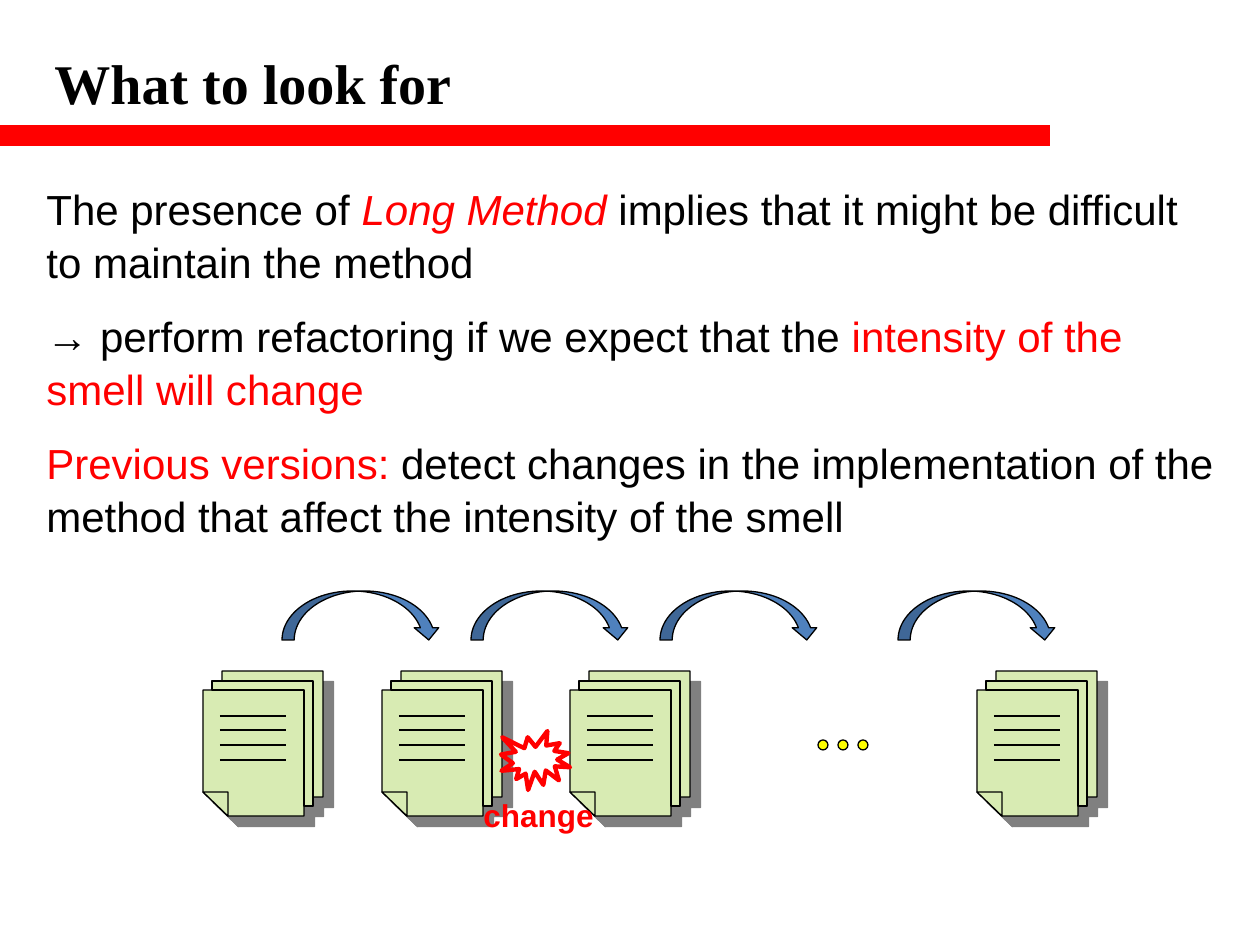
import dataclasses
import typing

import lxml.etree
import pptx
import pptx.dml.color
import pptx.enum.shapes
import pptx.oxml
import pptx.oxml.ns
import pptx.util

EMU_PER_PX = 914400 / 126
RED = pptx.dml.color.RGBColor(0xFF, 0x00, 0x00)
BLACK = pptx.dml.color.RGBColor(0x00, 0x00, 0x00)
GREEN = pptx.dml.color.RGBColor(0xD8, 0xEB, 0xB3)
BLUE = pptx.dml.color.RGBColor(0x4F, 0x81, 0xBD)
YELLOW = pptx.dml.color.RGBColor(0xFF, 0xFF, 0x00)
SHADOW_GRAY = "808080"

SHAPES = pptx.enum.shapes.MSO_SHAPE
PAGE_TOP = 671
VERSION_LEFTS = (203, 382, 570, 977)
ARROW_LEFTS = (282, 471, 660, 898)
PAGE_CONTOURS = (
    ((0, 121), (0, 19), (9, 19), (9, 10), (19, 10), (19, 0), (120, 0),
     (120, 126), (110, 126), (110, 135), (101, 135), (101, 145), (25, 145)),
    ((19, 10), (110, 10), (110, 135), (101, 135), (101, 19), (9, 19), (9, 10)),
    ((0, 121), (25, 121), (25, 145)),
)


@dataclasses.dataclass(frozen=True)
class Box:
    left: int
    top: int
    width: int
    height: int

    def emu(self) -> tuple:
        return tuple(px(value) for value in dataclasses.astuple(self))


@dataclasses.dataclass(frozen=True)
class TextRun:
    text: str
    size: int = 24
    color: pptx.dml.color.RGBColor = BLACK
    bold: bool = False
    italic: bool = False
    font: str = "Arial"


@dataclasses.dataclass(frozen=True)
class TextParagraph:
    runs: typing.Sequence[TextRun]
    before: int = 0
    after: int = 0
    line_spacing: float = 1.0


BODY = (
    (TextRun("The presence of "), TextRun("Long Method", color=RED, italic=True),
     TextRun(" implies that it might be difficult to maintain the method")),
    (TextRun("→ ", bold=True),
     TextRun("perform refactoring if we expect that the "),
     TextRun("intensity of the smell will change", color=RED)),
    (TextRun("Previous versions: ", color=RED),
     TextRun("detect changes in the implementation of the method "
             "that affect the intensity of the smell")),
)


def px(value: int) -> pptx.util.Emu:
    return pptx.util.Emu(round(value * EMU_PER_PX))


def add_text(slide, box: Box, paragraphs: typing.Sequence[TextParagraph], wrap: bool = True) -> None:
    frame = slide.shapes.add_textbox(*box.emu()).text_frame
    frame.word_wrap = wrap
    for index, content in enumerate(paragraphs):
        paragraph = frame.add_paragraph() if index else frame.paragraphs[0]
        paragraph.space_before = pptx.util.Pt(content.before)
        paragraph.space_after = pptx.util.Pt(content.after)
        paragraph.line_spacing = content.line_spacing
        for text_run in content.runs:
            run = paragraph.add_run()
            run.text = text_run.text
            run.font.name = text_run.font
            run.font.size = pptx.util.Pt(text_run.size)
            run.font.bold = text_run.bold
            run.font.italic = text_run.italic
            run.font.color.rgb = text_run.color


def add_line(slide, start: tuple, end: tuple, color, width: float) -> None:
    connector = slide.shapes.add_connector(
        pptx.enum.shapes.MSO_CONNECTOR.STRAIGHT, *map(px, start + end))
    connector.line.color.rgb = color
    connector.line.width = pptx.util.Pt(width)
    lxml.etree.SubElement(connector.element.spPr, pptx.oxml.ns.qn("a:effectLst"))


def style(shape, fill=None, line=BLACK, width: float = 0.75) -> None:
    shape.shadow.inherit = False
    if fill is None:
        shape.fill.background()
    else:
        shape.fill.solid()
        shape.fill.fore_color.rgb = fill
    shape.line.color.rgb = line
    shape.line.width = pptx.util.Pt(width)


def split_contours(shape) -> None:
    path_list = shape.element.spPr.find(".//" + pptx.oxml.ns.qn("a:pathLst"))
    combined = path_list[0]
    contour = None
    for step in list(combined):
        if step.tag == pptx.oxml.ns.qn("a:moveTo"):
            contour = lxml.etree.SubElement(path_list, combined.tag, dict(combined.attrib))
        contour.append(step)
    path_list.remove(combined)


def add_drop_shadow(shape) -> None:
    effects = shape.element.spPr.find(pptx.oxml.ns.qn("a:effectLst"))
    effects.append(pptx.oxml.parse_xml(
        f'<a:outerShdw {pptx.oxml.ns.nsdecls("a")} dist="107950" dir="2700000" '
        f'algn="ctr" rotWithShape="0"><a:srgbClr val="{SHADOW_GRAY}"/></a:outerShdw>'))


def add_version(slide, left: int) -> None:
    first, *others = PAGE_CONTOURS
    builder = slide.shapes.build_freeform(*first[0], scale=EMU_PER_PX)
    builder.add_line_segments(first[1:], close=True)
    for contour in others:
        builder.move_to(*contour[0])
        builder.add_line_segments(contour[1:], close=True)
    pages = builder.convert_to_shape(px(left), px(PAGE_TOP))
    split_contours(pages)
    style(pages, GREEN)
    add_drop_shadow(pages)
    for row in range(4):
        y = PAGE_TOP + 45 + row * 44 // 3
        add_line(slide, (left + 17, y), (left + 83, y), BLACK, 0.75)


def add_preset(slide, preset, box: Box, **colors):
    shape = slide.shapes.add_shape(preset, *box.emu())
    style(shape, **colors)


def main() -> None:
    presentation = pptx.Presentation()
    presentation.slide_width = px(1260)
    presentation.slide_height = px(945)
    slide = presentation.slides.add_slide(presentation.slide_layouts[6])

    add_line(slide, (0, 136), (1050, 136), RED, 12)
    title = TextRun("What to look for", 32, bold=True, font="Times New Roman")
    add_text(slide, Box(42, 42, 1055, 81), [TextParagraph([title], before=4)])
    add_text(slide, Box(34, 175, 1201, 432),
             [TextParagraph(runs, after=12, line_spacing=1.05) for runs in BODY])

    for left in VERSION_LEFTS:
        add_version(slide, left)
    for left in ARROW_LEFTS:
        add_preset(slide, SHAPES.CURVED_DOWN_ARROW, Box(left, 591, 159, 49), fill=BLUE)
    for index in range(3):
        add_preset(slide, SHAPES.OVAL, Box(818 + 20 * index, 740, 10, 10), fill=YELLOW)

    add_preset(slide, SHAPES.EXPLOSION1, Box(501, 731, 69, 59), line=RED, width=2.5)
    change = TextRun("change", 18, RED, bold=True)
    add_text(slide, Box(471, 790, 139, 50), [TextParagraph([change])], wrap=False)

    presentation.save("out.pptx")


if __name__ == "__main__":
    main()
